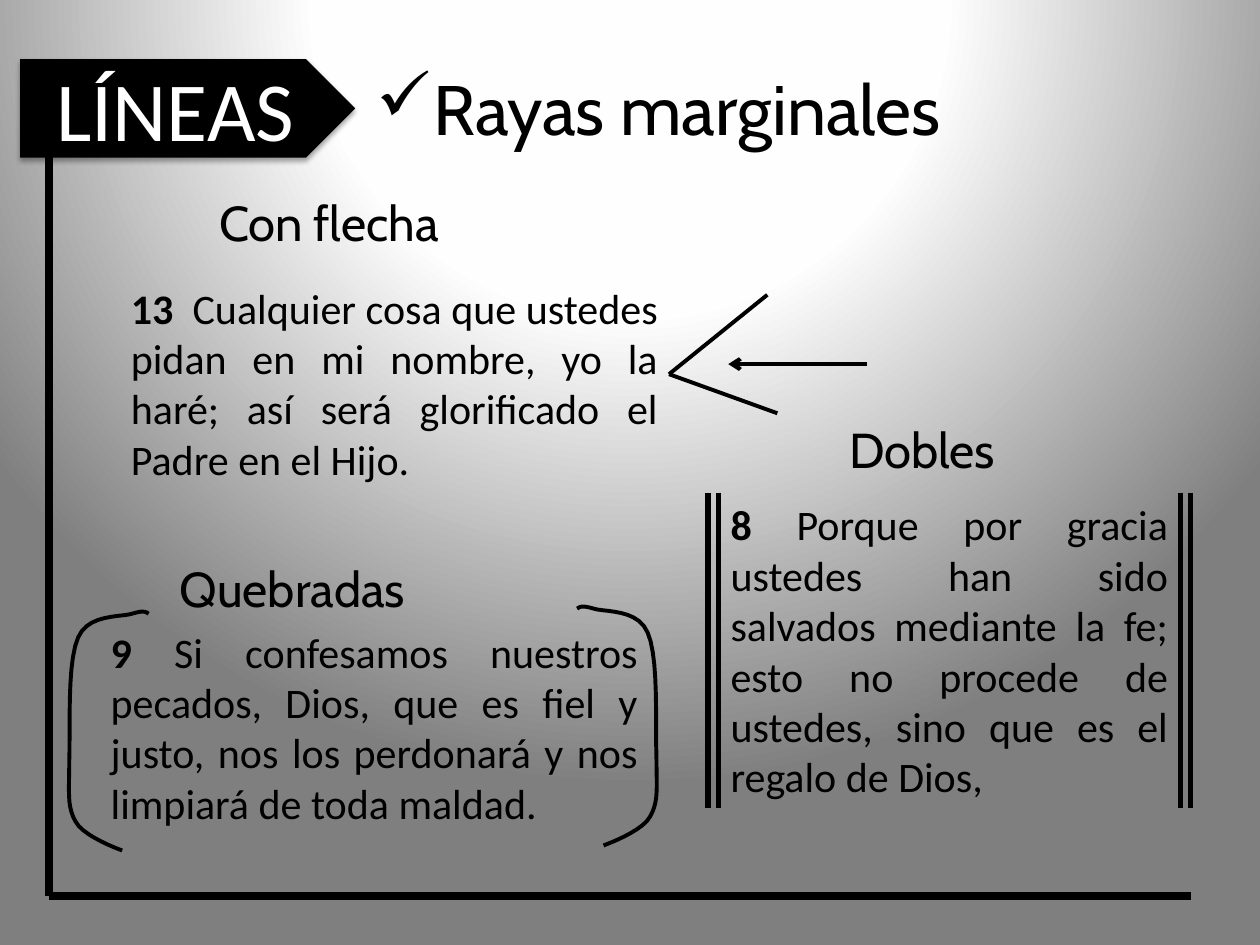
"""Build the slide on marginal line markings for highlighting verses."""
from pptx import Presentation
from pptx.dml.color import RGBColor
from pptx.enum.shapes import MSO_CONNECTOR, MSO_SHAPE
from pptx.enum.text import MSO_ANCHOR, MSO_AUTO_SIZE, PP_ALIGN
from pptx.oxml import parse_xml
from pptx.oxml.ns import nsdecls, qn
from pptx.util import Inches, Pt

STRAIGHT, PENTAGON = MSO_CONNECTOR.STRAIGHT, MSO_SHAPE.PENTAGON
MIDDLE, GROW = MSO_ANCHOR.MIDDLE, MSO_AUTO_SIZE.SHAPE_TO_FIT_TEXT
LEFT, CENTER, JUSTIFY = PP_ALIGN.LEFT, PP_ALIGN.CENTER, PP_ALIGN.JUSTIFY

COLORS = {"ink": "000000", "paper": "FFFFFF", "glow": "FEFEFE", "edge": "7F7F7F"}
FORMATS = {
    "banner": {"name": "Calibri", "size": Pt(48)},
    "title": {"name": "Cabin", "size": Pt(40)},
    "heading": {"name": "Cabin", "size": Pt(28)},
    "number": {"name": "Calibri", "size": Pt(24), "bold": True},
    "verse": {"name": "Calibri", "size": Pt(24), "bold": False},
}
HEADINGS = [
    ("Con flecha", (1.64, 1.48, 2.5, 0.57)),
    ("Quebradas", (1.33, 4.38, 2.11, 0.57)),
    ("Dobles", (6.64, 3.28, 2.11, 0.57)),
]
VERSES = [
    ("13 ", " Cualquier cosa que ustedes pidan en mi nombre, yo la haré; "
     "así será glorificado el Padre en el Hijo.", (0.94, 2.19, 4.38, 1.72)),
    ("9 ", "Si confesamos nuestros pecados, Dios, que es fiel y justo, nos los "
     "perdonará y nos limpiará de toda maldad.", (0.78, 4.92, 4.38, 1.72)),
    ("8 ", "Porque por gracia ustedes han sido salvados mediante la fe; esto no "
     "procede de ustedes, sino que es el regalo de Dios,", (5.7, 3.91, 3.67, 2.52)),
]
BRACKET = [
    (4.58, 4.83), (4.6, 4.82), (4.61, 4.8), (4.71, 4.83),
    (4.8, 4.86), (5.06, 4.83), (5.14, 5.02),
    (5.23, 5.22), (5.2, 5.76), (5.21, 6),
    (5.21, 6.24), (5.23, 6.36), (5.16, 6.48),
    (5.1, 6.6), (4.79, 6.71), (4.79, 6.71),
]


def bezier(points, steps=10):
    """Return points along a chain of cubic curves."""
    curve = [points[0]]
    for i in range(0, len(points) - 1, 3):
        for n in range(1, steps + 1):
            t = n / steps
            weights = ((1 - t) ** 3, 3 * t * (1 - t) ** 2, 3 * t * t * (1 - t), t ** 3)
            curve.append(tuple(sum(w * pt[axis] for w, pt in zip(weights, points[i:i + 4]))
                               for axis in (0, 1)))
    return curve


class SlideBuilder:
    """Hold the style and the current slide."""

    def __init__(self, prs):
        """Add a title-only slide."""
        self.s = prs.slides.add_slide(prs.slide_layouts[5])

    def background(self):
        """Fill the background with a radial gradient."""
        self.s.background.fill.solid()
        bg = self.s.element.find(".//" + qn("p:bgPr"))
        stops = "".join(
            f'<a:gs pos="{pos * 1000}"><a:srgbClr val="{COLORS[key]}"/></a:gs>'
            for pos, key in ((0, "paper"), (40, "glow"), (100, "edge")))
        bg.replace(bg[0], parse_xml(
            f'<a:gradFill {nsdecls("a")} rotWithShape="1"><a:gsLst>{stops}</a:gsLst>'
            '<a:path path="circle"><a:fillToRect l="50000" t="-80000" r="50000" b="180000"/>'
            '</a:path></a:gradFill>'))

    def add_runs(self, sp, runs, align=LEFT, color="ink"):
        """Put formatted runs into the first paragraph of a shape."""
        p = sp.text_frame.paragraphs[0]
        p.alignment = align
        for text, style in runs:
            r = p.add_run()
            r.text = text
            for key, value in FORMATS[style].items():
                setattr(r.font, key, value)
            r.font.color.rgb = RGBColor.from_string(COLORS[color])
        return p

    def title(self, text, box):
        """Place the title with a check mark bullet."""
        sp = self.s.shapes.title
        sp.left, sp.top, sp.width, sp.height = map(Inches, box)
        sp.text_frame.auto_size = GROW
        pPr = self.add_runs(sp, [(text, "title")])._p.get_or_add_pPr()
        pPr.set("marL", str(Inches(0.45)))
        pPr.set("indent", str(-Inches(0.45)))
        pPr.append(parse_xml(f'<a:buChar {nsdecls("a")} char="✓"/>'))

    def text(self, runs, box, align=LEFT):
        """Add a wrapping text box."""
        sp = self.s.shapes.add_textbox(*map(Inches, box))
        sp.text_frame.word_wrap = True
        sp.text_frame.auto_size = GROW
        self.add_runs(sp, runs, align)

    def banner(self, text, box):
        """Add the pointed label with a soft shadow."""
        sp = self.s.shapes.add_shape(PENTAGON, *map(Inches, box))
        sp.fill.solid()
        sp.fill.fore_color.rgb = RGBColor.from_string(COLORS["ink"])
        sp.line.fill.background()
        sp.shadow.inherit = False
        sp.element.spPr.find(qn("a:effectLst")).append(parse_xml(
            f'<a:outerShdw {nsdecls("a")} blurRad="{Pt(3.1)}" dist="{Pt(1.8)}" dir="5400000" '
            f'rotWithShape="0"><a:srgbClr val="{COLORS["ink"]}"><a:alpha val="35000"/>'
            '</a:srgbClr></a:outerShdw>'))
        sp.text_frame.vertical_anchor = MIDDLE
        self.add_runs(sp, [(text, "banner")], CENTER, "paper")

    def stroke(self, sp, width):
        """Set the outline of a line or curve."""
        sp.line.color.rgb = RGBColor.from_string(COLORS["ink"])
        sp.line.width = Pt(width)

    def line(self, x1, y1, x2, y2, width=2.25, arrow=False):
        """Add a straight line, with an arrowhead at its end if asked."""
        sp = self.s.shapes.add_connector(STRAIGHT, *map(Inches, (x1, y1, x2, y2)))
        self.stroke(sp, width)
        spPr = sp.element.spPr
        if arrow:
            spPr.find(qn("a:ln")).append(parse_xml(f'<a:tailEnd {nsdecls("a")} type="arrow"/>'))
        spPr.append(parse_xml(f'<a:effectLst {nsdecls("a")}/>'))

    def curve(self, points):
        """Add an open curve."""
        start, *rest = [tuple(map(Inches, pt)) for pt in bezier(points)]
        builder = self.s.shapes.build_freeform(*start)
        builder.add_line_segments(rest, close=False)
        sp = builder.convert_to_shape()
        sp.fill.background()
        sp.shadow.inherit = False
        self.stroke(sp, 2.25)


def main():
    """Build and save the slide."""
    prs = Presentation()
    prs.slide_width, prs.slide_height = Inches(10), Inches(7.5)
    slide = SlideBuilder(prs)
    slide.background()
    slide.line(0.39, 0.47, 0.39, 7.11, 4.5)
    slide.banner("LÍNEAS", (0.16, 0.47, 2.66, 0.78))
    slide.line(0.39, 7.11, 9.45, 7.11, 4.5)
    slide.title("Rayas marginales", (2.89, 0.47, 6.48, 0.77))
    for number, verse, box in VERSES:
        slide.text([(number, "number"), (verse, "verse")], box, JUSTIFY)
    for heading, box in HEADINGS:
        slide.text([(heading, "heading")], box)
    slide.line(6.09, 2.34, 5.31, 2.97)
    slide.line(6.17, 3.28, 5.31, 2.97)
    slide.line(6.88, 2.89, 5.78, 2.89, arrow=True)
    slide.curve(BRACKET)
    slide.curve([(5.76 - x, y + 0.04) for x, y in BRACKET])
    for x in (5.7, 5.62, 9.45, 9.37):
        slide.line(x, 3.91, x, 6.41, 3)
    prs.save("out.pptx")


if __name__ == "__main__":
    main()
